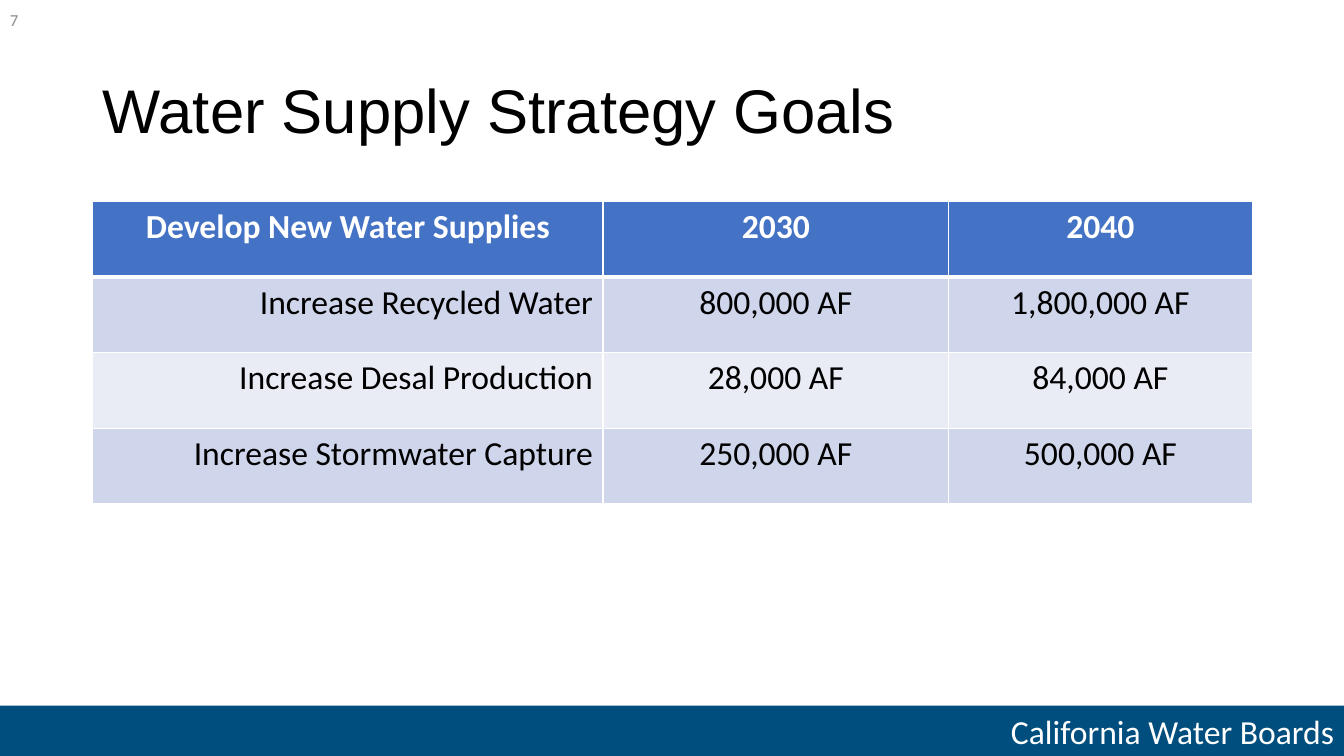
from dataclasses import dataclass

from pptx import Presentation
from pptx import util as u
from pptx.dml.color import RGBColor
from pptx.enum import shapes, text
from pptx.oxml.ns import qn
from lxml import etree

LEFT, CENTER, RIGHT = text.PP_ALIGN.LEFT, text.PP_ALIGN.CENTER, text.PP_ALIGN.RIGHT


@dataclass(frozen=True)
class Theme:
    heading_font: str = "Arial"
    body_font: str = "Calibri"
    title_size: int = 44
    body_size: int = 24
    number_size: int = 12
    black: str = "000000"
    white: str = "FFFFFF"
    grey: str = "8C8C8C"
    footer: str = "004E7D"
    header: str = "4472C4"
    bands: tuple = ("CFD5EA", "E9EBF5")


class SlideBuilder:
    def __init__(self, slide, theme):
        self.slide, self.theme = slide, theme

    def add_text(self, tf, wording, size, color, align=LEFT, font=None, bold=False):
        p = tf.paragraphs[0]
        p.alignment = align
        r = p.add_run()
        r.text = wording
        r.font.name = font or self.theme.body_font
        r.font.size = u.Pt(size)
        r.font.bold = bold
        r.font.color.rgb = RGBColor.from_string(color)
        return p

    def paint(self, fill, color):
        fill.solid()
        fill.fore_color.rgb = RGBColor.from_string(color)

    def footer(self, wording, left, top, width, height):
        sp = self.slide.shapes.add_shape(
            shapes.MSO_SHAPE.RECTANGLE, *map(u.Inches, (left, top, width, height)))
        sp.shadow.inherit = False
        self.paint(sp.fill, self.theme.footer)
        sp.line.fill.background()
        sp.text_frame.vertical_anchor = text.MSO_ANCHOR.MIDDLE
        self.add_text(sp.text_frame, wording, self.theme.body_size, self.theme.white, RIGHT)

    def title(self, wording, left, top, width, height):
        sp = self.slide.shapes.title
        sp.left, sp.top, sp.width, sp.height = map(u.Inches, (left, top, width, height))
        tf = sp.text_frame
        tf.auto_size = text.MSO_AUTO_SIZE.NONE
        tf.vertical_anchor = text.MSO_ANCHOR.MIDDLE
        p = self.add_text(tf, wording, self.theme.title_size, self.theme.black,
                          font=self.theme.heading_font)
        p.line_spacing = 0.9

    def page_number(self, wording, left, top, width, height):
        sp = self.slide.shapes.add_textbox(*map(u.Inches, (left, top, width, height)))
        tf = sp.text_frame
        tf.word_wrap = True
        tf.vertical_anchor = text.MSO_ANCHOR.MIDDLE
        self.add_text(tf, wording, self.theme.number_size, self.theme.grey)

    def cell_borders(self, cell, widths):
        """Draw white borders; widths are points keyed by side (L, R, T, B)."""
        tc_pr = cell._tc.get_or_add_tcPr()
        for side, width in widths.items():
            ln = etree.SubElement(tc_pr, qn(f"a:ln{side}"), w=str(u.Pt(width)))
            fill = etree.SubElement(ln, qn("a:solidFill"))
            etree.SubElement(fill, qn("a:srgbClr"), val=self.theme.white)

    def table(self, rows, left, top, col_widths, row_height):
        """Header row in bold, then banded rows with right-aligned labels."""
        th = self.theme
        frame = self.slide.shapes.add_table(
            len(rows), len(col_widths), u.Inches(left), u.Inches(top),
            u.Inches(sum(col_widths)), u.Inches(row_height * len(rows)))
        table = frame.table
        for column, width in zip(table.columns, col_widths):
            column.width = u.Inches(width)
        for i, row in enumerate(rows):
            table.rows[i].height = u.Inches(row_height)
            header = i == 0
            background = th.header if header else th.bands[(i - 1) % 2]
            borders = {"L": 1, "R": 1, "T": 3 if i == 1 else 1, "B": 3 if header else 1}
            for j, wording in enumerate(row):
                cell = table.cell(i, j)
                self.cell_borders(cell, borders)
                self.paint(cell.fill, background)
                self.add_text(cell.text_frame, wording, th.body_size,
                              th.white if header else th.black,
                              CENTER if header or j else RIGHT, bold=header)


def main():
    prs = Presentation()
    prs.slide_width, prs.slide_height = u.Inches(13.33), u.Inches(7.5)
    s = SlideBuilder(prs.slides.add_slide(prs.slide_layouts[5]), Theme())

    s.footer("California Water Boards", 0, 7, 13.33, 0.5)
    s.title("Water Supply Strategy Goals", 0.92, 0.4, 11.5, 1.45)
    s.table([
        ("Develop New Water Supplies", "2030", "2040"),
        ("Increase Recycled Water", "800,000 AF", "1,800,000 AF"),
        ("Increase Desal Production", "28,000 AF", "84,000 AF"),
        ("Increase Stormwater Capture", "250,000 AF", "500,000 AF"),
    ], 0.92, 2, (5.06, 3.43, 3.01), 0.75)
    s.page_number("7", 0, 0, 3, 0.4)

    prs.save("out.pptx")


if __name__ == "__main__":
    main()
